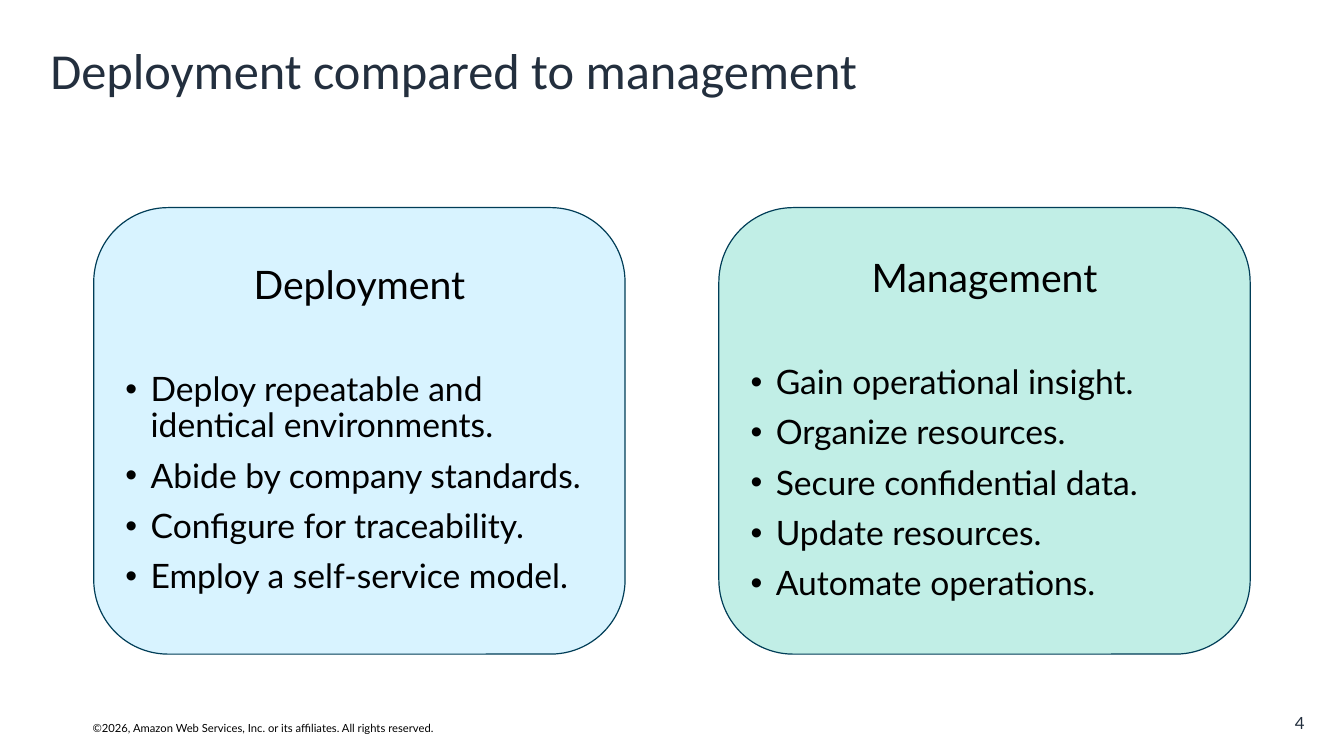
from lxml import etree
from pptx import Presentation
from pptx.dml.color import RGBColor
from pptx.enum.shapes import MSO_SHAPE
from pptx.enum.text import MSO_ANCHOR, MSO_AUTO_SIZE, PP_ALIGN
from pptx.oxml.ns import qn
from pptx.util import Inches, Pt

ROUNDED = MSO_SHAPE.ROUNDED_RECTANGLE
MIDDLE = MSO_ANCHOR.MIDDLE
FIT_SHAPE, NO_FIT = MSO_AUTO_SIZE.SHAPE_TO_FIT_TEXT, MSO_AUTO_SIZE.NONE
LEFT, CENTER, RIGHT = PP_ALIGN.LEFT, PP_ALIGN.CENTER, PP_ALIGN.RIGHT

INK = RGBColor(0x23, 0x2F, 0x3E)
BLACK = RGBColor(0x00, 0x00, 0x00)
OUTLINE = RGBColor(0x00, 0x3D, 0x57)
SKY = RGBColor(0xD8, 0xF3, 0xFF)
MINT = RGBColor(0xC1, 0xEE, 0xE6)

CARD_LEFT, CARD_PITCH = 0.93, 6.2
CARDS = [
    ("Deployment", SKY, [
        "Deploy repeatable and identical environments.",
        "Abide by company standards.",
        "Configure for traceability.",
        "Employ a self-service model.",
    ]),
    ("Management", MINT, [
        "Gain operational insight.",
        "Organize resources.",
        "Secure confidential data.",
        "Update resources.",
        "Automate operations.",
    ]),
]


class SlideBuilder:
    """Holds the slide and the style of its title, cards and footer."""

    title_font = "Calibri"
    body_font = "Lato"
    line_spacing = 0.9

    def __init__(self, slide):
        self.slide = slide

    def format(self, paragraph, size, color, font, align=LEFT):
        paragraph.alignment = align
        for run in paragraph.runs:
            run.font.name = font
            run.font.size = Pt(size)
            run.font.color.rgb = color

    def title(self, text):
        shape = self.slide.shapes.title
        shape.left, shape.top = Inches(0.4), Inches(0.33)
        shape.width, shape.height = Inches(12.54), Inches(0.8)
        frame = shape.text_frame
        frame.text = text
        frame.auto_size = NO_FIT
        frame.vertical_anchor = MIDDLE
        paragraph = frame.paragraphs[0]
        paragraph.line_spacing = self.line_spacing
        self.format(paragraph, 36, INK, self.title_font)

    def bullet(self, paragraph):
        properties = paragraph._p.get_or_add_pPr()
        properties.set("marL", str(Inches(0.25)))
        properties.set("indent", str(-Inches(0.25)))
        etree.SubElement(properties, qn("a:buFont"), typeface="Arial")
        etree.SubElement(properties, qn("a:buChar"), char="•")

    def card(self, left, heading, fill, points):
        shape = self.slide.shapes.add_shape(
            ROUNDED, Inches(left), Inches(2.06), Inches(5.27), Inches(4.43))
        shape.shadow.inherit = False
        shape.fill.solid()
        shape.fill.fore_color.rgb = fill
        shape.line.color.rgb = OUTLINE
        shape.line.width = Pt(0.85)
        frame = shape.text_frame
        frame.word_wrap = True
        frame.vertical_anchor = MIDDLE
        frame.text = heading
        paragraph = frame.paragraphs[0]
        paragraph.line_spacing = self.line_spacing
        paragraph.space_after = Pt(36)
        self.format(paragraph, 28, BLACK, self.body_font, CENTER)
        for point in points:
            paragraph = frame.add_paragraph()
            paragraph.text = point
            self.bullet(paragraph)
            paragraph.line_spacing = self.line_spacing
            paragraph.space_before = Pt(10)
            self.format(paragraph, 24, BLACK, self.body_font)

    def text_box(self, left, top, width, height, text, size, color, align=LEFT):
        box = self.slide.shapes.add_textbox(
            Inches(left), Inches(top), Inches(width), Inches(height))
        frame = box.text_frame
        frame.text = text
        self.format(frame.paragraphs[0], size, color, self.body_font, align)
        return frame

    def copyright(self, text):
        frame = self.text_box(0.82, 7.11, 3.74, 0.24, text, 8, BLACK)
        frame.word_wrap = False
        frame.auto_size = FIT_SHAPE

    def page_number(self, text):
        frame = self.text_box(12.41, 7.05, 0.53, 0.25, text, 12, INK, RIGHT)
        frame.word_wrap = True
        frame.vertical_anchor = MIDDLE
        frame.margin_left = frame.margin_right = 0
        frame.margin_top = frame.margin_bottom = 0


def main():
    presentation = Presentation()
    presentation.slide_width = Inches(13.33)
    presentation.slide_height = Inches(7.5)
    slide = presentation.slides.add_slide(presentation.slide_layouts[5])
    builder = SlideBuilder(slide)
    builder.title("Deployment compared to management")
    for index, (heading, fill, points) in enumerate(CARDS):
        builder.card(CARD_LEFT + index * CARD_PITCH, heading, fill, points)
    builder.copyright(
        "©2026, Amazon Web Services, Inc. or its affiliates. All rights reserved.")
    builder.page_number("4")
    presentation.save("out.pptx")


if __name__ == "__main__":
    main()
